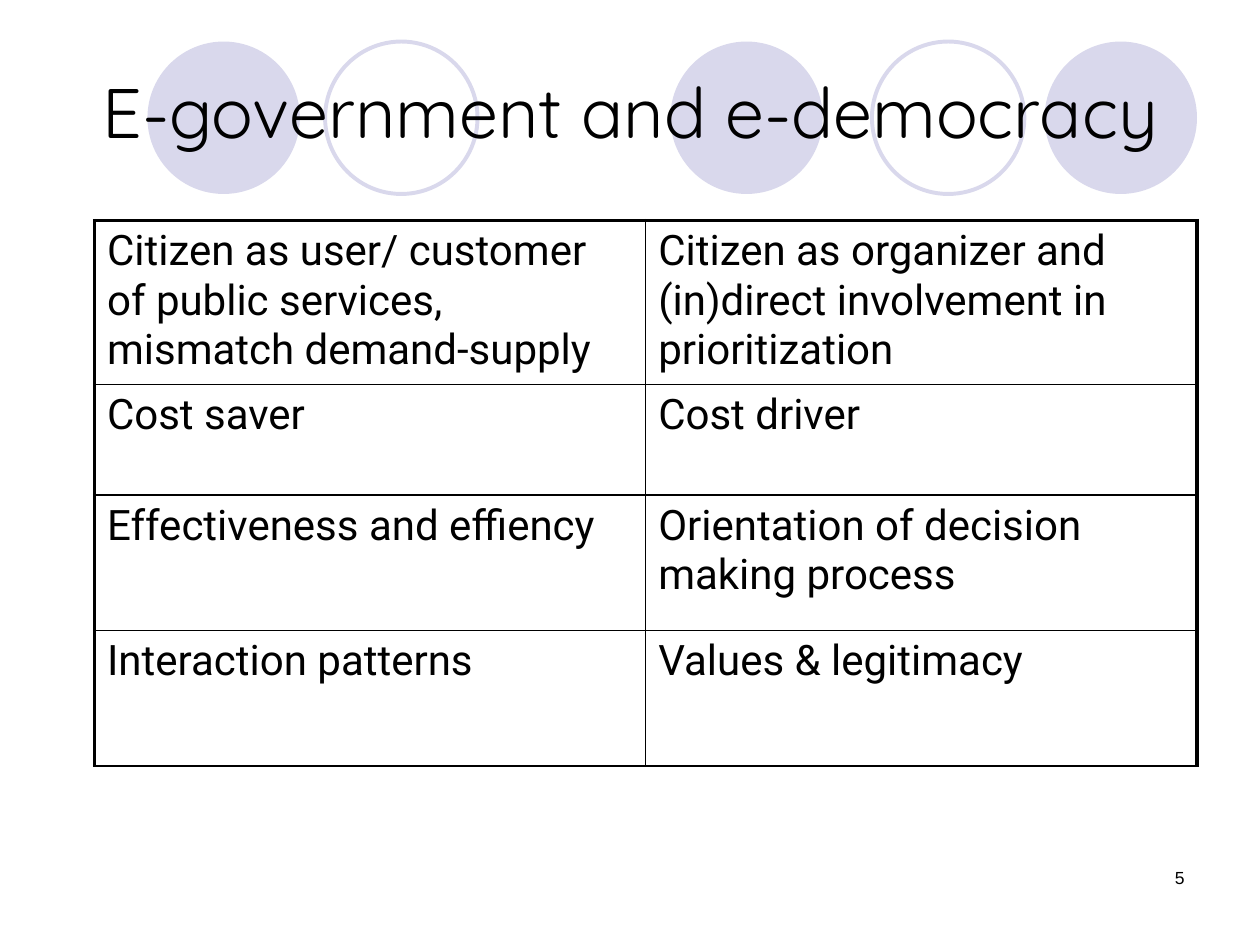
"""Build a slide that sets e-government beside e-democracy in a table."""
import pptx
import pptx.util
import pptx.dml.color
import pptx.enum.shapes
import pptx.enum.text
import pptx.oxml
import pptx.oxml.ns

RGB = pptx.dml.color.RGBColor.from_string
ALIGN = pptx.enum.text.PP_ALIGN
ANCHOR = pptx.enum.text.MSO_ANCHOR

theme = {
    "ink": "000000", "pale": "D9D8EC",
    "title": ("Quicksand", 40), "body": ("Roboto", 24), "page": ("Arial", 10),
    "thick": 2.25, "thin": 1,
}

deck = pptx.Presentation()
deck.slide_width = pptx.util.Inches(10)
deck.slide_height = pptx.util.Inches(7.5)
slide = deck.slides.add_slide(deck.slide_layouts[6])
shapes = slide.shapes
unit = deck.slide_width / 40


def grid(*cells):
    """Turn grid steps into lengths."""
    return [pptx.util.Emu(round(cell * unit)) for cell in cells]


def write(frame, text, style="body", align=ALIGN.LEFT, anchor=ANCHOR.TOP):
    """Fill a text frame with one styled paragraph."""
    frame.word_wrap = True
    frame.vertical_anchor = anchor
    para = frame.paragraphs[0]
    para.alignment = align
    run = para.add_run()
    run.text = text
    name, size = theme[style]
    run.font.name = name
    run.font.size = pptx.util.Pt(size)
    run.font.color.rgb = RGB(theme["ink"])


for left, solid in ((21.28, True), (33.16, True), (4.68, True),
                    (27.68, False), (10.32, False)):
    disc = shapes.add_shape(pptx.enum.shapes.MSO_SHAPE.OVAL,
                            *grid(left, 1.32, 4.84, 4.84))
    disc.shadow.inherit = False
    if solid:
        disc.fill.solid()
        disc.fill.fore_color.rgb = RGB(theme["pale"])
        disc.line.fill.background()
    else:
        disc.fill.background()
        disc.line.color.rgb = RGB(theme["pale"])
        disc.line.width = pptx.util.Pt(theme["thick"])

page = shapes.add_textbox(*grid(28.68, 27.32, 9.32, 2))
write(page.text_frame, "5", style="page", align=ALIGN.RIGHT)
title = shapes.add_textbox(*grid(2, 1, 36, 5))
write(title.text_frame, "E-government and e-democracy", style="title",
      align=ALIGN.CENTER, anchor=ANCHOR.MIDDLE)

rows = (
    ("Citizen as user/ customer of public services, mismatch demand-supply",
     "Citizen as organizer and (in)direct involvement in prioritization"),
    ("Cost saver", "Cost driver"),
    ("Effectiveness and effiency", "Orientation of decision making process"),
    ("Interaction patterns", "Values & legitimacy"),
)
highs = grid(5.12, 3.52, 4.3, 4.3)
table = shapes.add_table(len(rows), 2, *grid(3, 7, 35, 17.24)).table
table.first_row = table.horz_banding = False
for row, high in zip(table.rows, highs):
    row.height = high

for r, row in enumerate(rows):
    for c, text in enumerate(row):
        cell = table.cell(r, c)
        write(cell.text_frame, text)
        props = cell._tc.get_or_add_tcPr()
        edges = {"L": c == 0, "R": c == 1, "T": r == 0, "B": False}
        for side, outer in edges.items():
            width = pptx.util.Pt(theme["thick" if outer else "thin"])
            props.append(pptx.oxml.parse_xml(
                f'<a:ln{side} {pptx.oxml.ns.nsdecls("a")} w="{width}">'
                f'<a:solidFill><a:srgbClr val="{theme["ink"]}"/></a:solidFill>'
                f'</a:ln{side}>'))
        cell.fill.background()

deck.save("out.pptx")
